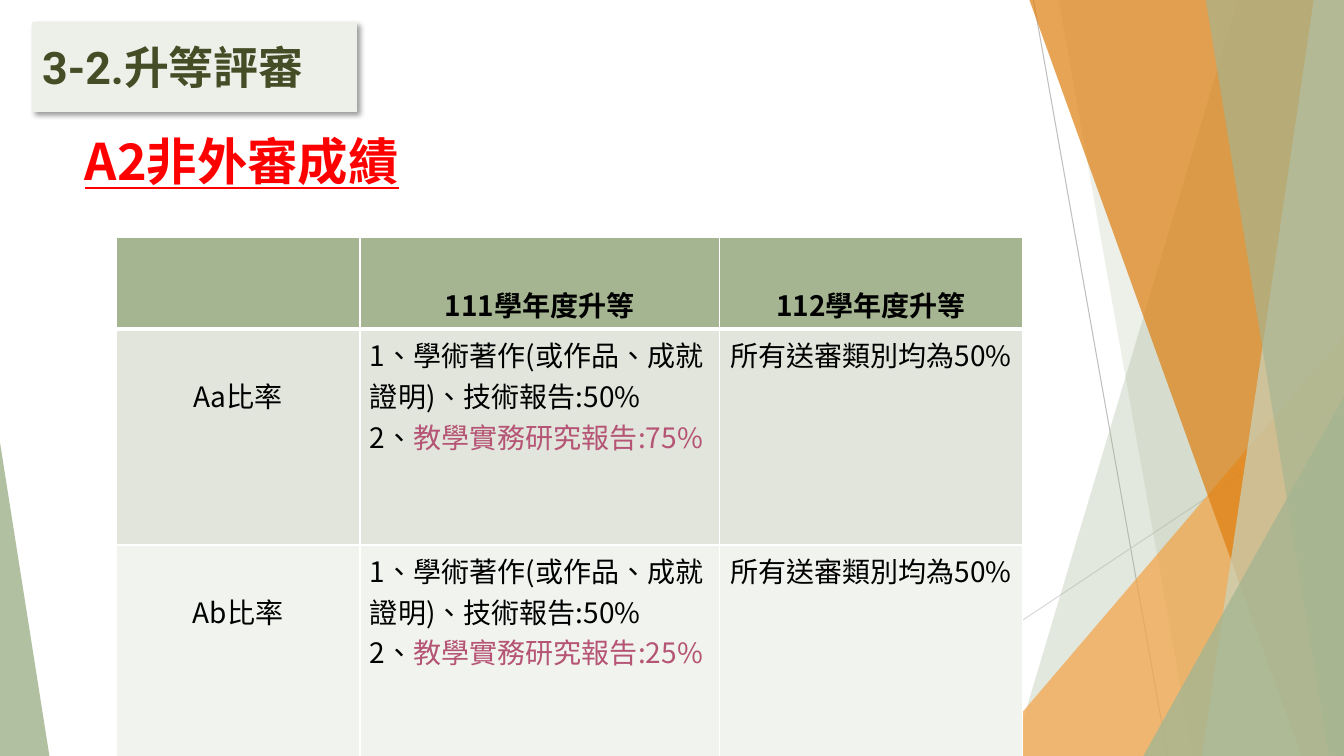
from lxml import etree
from pptx import Presentation
from pptx import util as u
from pptx.dml.color import RGBColor
from pptx.enum import shapes, text
from pptx.oxml.ns import qn

GREEN = RGBColor(0xA5, 0xB5, 0x92)
PALE_GREEN = RGBColor(0xC9, 0xD3, 0xBE)
ORANGE = RGBColor(0xF3, 0xA4, 0x47)
DARK_ORANGE = RGBColor(0xDD, 0x7E, 0x0E)
TAG_FILL = RGBColor(0xED, 0xF0, 0xE9)
TAG_TEXT = RGBColor(0x44, 0x4D, 0x26)
RED = RGBColor(0xFF, 0, 0)
ROSE = RGBColor(0xB5, 0x54, 0x75)
BLACK = RGBColor(0, 0, 0)
ROW_FILLS = [GREEN, RGBColor(0xE1, 0xE5, 0xDC), RGBColor(0xF0, 0xF3, 0xEE)]
GRAYS = [RGBColor(0xBF, 0xBF, 0xBF), RGBColor(0xD9, 0xD9, 0xD9)]
CJK = "Noto Sans CJK SC"
WIDTH, HEIGHT = 13.33, 7.5

# Content
TITLE = "A2非外審成績"
TAG = "3-2.升等評審"
HEADERS = ["", "111學年度升等", "112學年度升等"]
WORKS = "1、學術著作(或作品、成就證明)、技術報告:50%"
TEACHING = "教學實務研究報告:"
ALL_TYPES = "所有送審類別均為50%"
RATIOS = [("Aa比率", "75%"), ("Ab比率", "25%")]
COLUMN_WIDTHS = [2.42, 3.57, 3]
ROW_HEIGHTS = [0.88, 2.14, 2.12]

# Decoration, back to front
LINES = [(10.25, 0, 11.58, HEIGHT), (WIDTH, 4.03, 8.12, HEIGHT)]
# Bands: top left x, bottom left x, colour, opacity; each reaches the right edge
# Triangles: left, top, width, apex position, colour, opacity; each stands on the bottom edge
DECORATION = [
    ("band", 12.28, 10.04, GREEN, 30),
    ("band", 10.5, 11.83, GREEN, 20),
    ("triangle", 9.77, 3.33, 3.56, 1, ORANGE, 72),
    ("band", 10.21, 12.91, DARK_ORANGE, 70),
    ("band", 13.03, 11.92, PALE_GREEN, 70),
    ("band", 11.96, 13.18, GREEN, 65),
    ("triangle", 11.34, 3.93, 1.99, 1, GREEN, 80),
    ("triangle", 0, 4.39, 0.49, 0, GREEN, 85),
]


def write(para, words, size=20, font=CJK, color=BLACK, bold=False,
          underline=False, align=None, spacing=None):
    span = para.add_run()
    span.text = words
    span.font.size = u.Pt(size)
    span.font.name = font
    span.font.bold = bold
    span.font.underline = underline
    span.font.color.rgb = color
    props = span._r.get_or_add_rPr()
    props.set("lang", "zh-TW")
    east = etree.Element(qn("a:ea"), typeface=CJK)
    props.find(qn("a:latin")).addnext(east)
    if align is not None:
        para.alignment = align
    if spacing is not None:
        para.line_spacing = spacing


def paint(shape, color, opacity=100):
    shape.shadow.inherit = False
    shape.line.fill.background()
    shape.fill.solid()
    shape.fill.fore_color.rgb = color
    if opacity < 100:
        tint = shape.element.spPr.find(qn("a:solidFill"))[0]
        etree.SubElement(tint, qn("a:alpha"), val=str(opacity * 1000))


def add_band(slide, top_x, bottom_x, color, opacity):
    builder = slide.shapes.build_freeform(u.Inches(top_x), 0)
    corners = [(WIDTH, 0), (WIDTH, HEIGHT), (bottom_x, HEIGHT)]
    builder.add_line_segments([(u.Inches(x), u.Inches(y)) for x, y in corners])
    paint(builder.convert_to_shape(), color, opacity)


def add_triangle(slide, left, top, width, apex, color, opacity):
    triangle = slide.shapes.add_shape(
        shapes.MSO_SHAPE.ISOSCELES_TRIANGLE, u.Inches(left), u.Inches(top),
        u.Inches(width), u.Inches(HEIGHT - top))
    triangle.adjustments[0] = apex
    paint(triangle, color, opacity)


def add_decoration(slide):
    for ends, gray in zip(LINES, GRAYS):
        line = slide.shapes.add_connector(
            shapes.MSO_CONNECTOR.STRAIGHT, *[u.Inches(v) for v in ends])
        line.line.color.rgb = gray
        line.line.width = u.Pt(0.75)
        etree.SubElement(line.element.spPr, qn("a:effectLst"))
    makers = {"band": add_band, "triangle": add_triangle}
    for kind, *values in DECORATION:
        makers[kind](slide, *values)


def add_borders(cell, top, bottom):
    props = cell._tc.get_or_add_tcPr()
    for side, points in (("L", 1), ("R", 1), ("T", top), ("B", bottom)):
        edge = etree.SubElement(props, qn("a:ln" + side), w=str(u.Pt(points)))
        fill = etree.SubElement(edge, qn("a:solidFill"))
        etree.SubElement(fill, qn("a:srgbClr"), val="FFFFFF")


def add_ratio_table(slide):
    frame = slide.shapes.add_table(
        len(ROW_HEIGHTS), len(COLUMN_WIDTHS), u.Inches(1.15), u.Inches(2.36),
        u.Inches(sum(COLUMN_WIDTHS)), u.Inches(sum(ROW_HEIGHTS)))
    table = frame.table
    for column, width in zip(table.columns, COLUMN_WIDTHS):
        column.width = u.Inches(width)
    for row, height in zip(table.rows, ROW_HEIGHTS):
        row.height = u.Inches(height)
    for i, row in enumerate(table.rows):
        for cell in row.cells:
            add_borders(cell, 3 if i == 1 else 1, 3 if i == 0 else 1)
            cell.fill.solid()
            cell.fill.fore_color.rgb = ROW_FILLS[i]

    center = text.PP_ALIGN.CENTER
    for i, header in enumerate(HEADERS):
        if header:
            write(table.cell(0, i).text_frame.paragraphs[0], header,
                  bold=True, align=center, spacing=2.0)
    for i, (label, share) in enumerate(RATIOS, start=1):
        name, earlier, later = [table.cell(i, j).text_frame for j in range(3)]
        write(name.paragraphs[0], label, align=center, spacing=2.0)
        write(earlier.paragraphs[0], WORKS)
        second = earlier.add_paragraph()
        write(second, "2、")
        write(second, TEACHING + share, color=ROSE)
        write(later.paragraphs[0], ALL_TYPES, align=center)


def add_title(slide):
    title = slide.shapes.title
    title.left, title.top, title.width, title.height = [
        u.Inches(v) for v in (0.74, 1.24, 9.4, 0.87)]
    title.text_frame.auto_size = text.MSO_AUTO_SIZE.NONE
    title.text_frame.vertical_anchor = text.MSO_ANCHOR.TOP
    write(title.text_frame.paragraphs[0], TITLE, size=36, color=RED, bold=True,
          underline=True, align=text.PP_ALIGN.LEFT)
    # Bring the title in front of the decoration
    title.element.getparent().append(title.element)


def add_tag(slide):
    box = slide.shapes.add_shape(
        shapes.MSO_SHAPE.RECTANGLE, u.Inches(0.32), u.Inches(0.22),
        u.Inches(3.22), u.Inches(0.89))
    paint(box, TAG_FILL)
    effects = box.element.spPr.find(qn("a:effectLst"))
    shadow = etree.SubElement(
        effects, qn("a:outerShdw"), blurRad=str(u.Pt(4)), dist=str(u.Pt(3)),
        dir=str(45 * 60000), algn="tl", rotWithShape="0")
    tint = etree.SubElement(shadow, qn("a:srgbClr"), val="000000")
    etree.SubElement(tint, qn("a:alpha"), val="40000")
    box.text_frame.word_wrap = True
    box.text_frame.vertical_anchor = text.MSO_ANCHOR.MIDDLE
    write(box.text_frame.paragraphs[0], TAG, size=32, font="Roboto",
          color=TAG_TEXT, bold=True, align=text.PP_ALIGN.LEFT)


def main():
    deck = Presentation()
    deck.slide_width = u.Inches(WIDTH)
    deck.slide_height = u.Inches(HEIGHT)
    page = deck.slides.add_slide(deck.slide_layouts[5])
    add_decoration(page)
    add_title(page)
    add_ratio_table(page)
    add_tag(page)
    deck.save("out.pptx")


if __name__ == "__main__":
    main()
